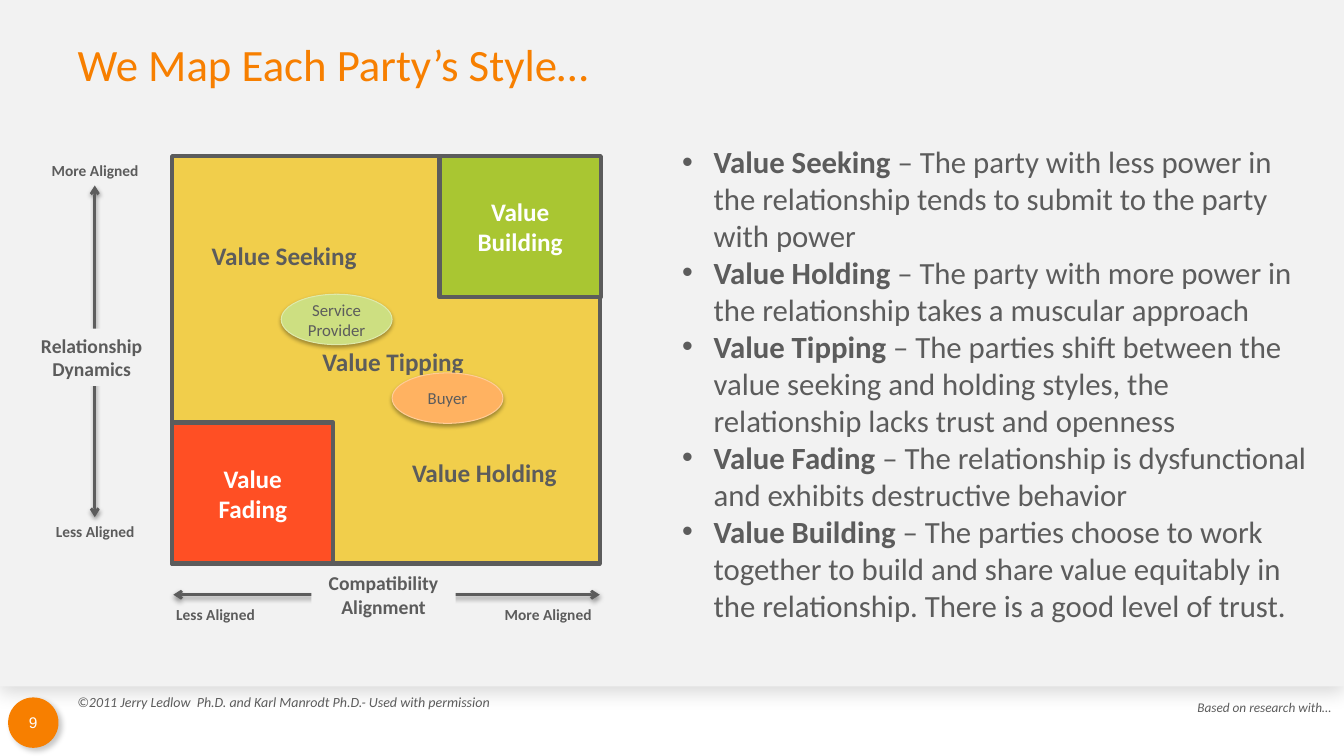
"""Builds the slide that maps each party's style on an alignment matrix."""
import pptx
import pptx.util
import pptx.dml.color
import pptx.enum.shapes
import pptx.enum.text
import pptx.oxml
import pptx.oxml.ns
from dataclasses import dataclass

Pt = pptx.util.Pt
Kind = pptx.enum.shapes.MSO_SHAPE
Align = pptx.enum.text.PP_ALIGN
Anchor = pptx.enum.text.MSO_ANCHOR


@dataclass(frozen=True)
class Theme:
    """Colours, fonts and type sizes."""
    panel: str = "F2F2F2"
    ink: str = "5C5C5C"
    white: str = "FFFFFF"
    accent: str = "F77F00"
    matrix: str = "F1CE4B"
    building: str = "A9C632"
    fading: str = "FF4F24"
    buyer: tuple = ("FFB261", "FFCC96")
    provider: tuple = ("CDDF81", "DEEAAB")
    font: str = "Calibri"
    number_font: str = "Arial"
    title: float = 32
    body: float = 22
    zone: float = 18
    axis: float = 14
    party: float = 12
    end: float = 11
    footer: float = 10
    credit: float = 9.5


THEME = Theme()

TITLE = "We Map Each Party’s Style…"
COPYRIGHT = "©2011 Jerry Ledlow  Ph.D. and Karl Manrodt Ph.D.- Used with permission"
CREDIT = "Based on research with…"
PAGE_NUMBER = "9"
STYLES = [
    ("Value Seeking", "The party with less power in the relationship tends to submit "
     "to the party with power"),
    ("Value Holding", "The party with more power in the relationship takes a muscular approach"),
    ("Value Tipping", "The parties shift between the value seeking and holding styles, "
     "the relationship lacks trust and openness"),
    ("Value Fading", "The relationship is dysfunctional and exhibits destructive behavior"),
    ("Value Building", "The parties choose to work together to build and share value "
     "equitably in the relationship. There is a good level of trust."),
]
MATRIX = (123, 111.6, 305.4, 291)
CORNER = (115.2, 100.8)
CORNERS = [
    (["Value Building"], THEME.building, (314, MATRIX[1])),
    (["Value", "Fading"], THEME.fading, (MATRIX[0], MATRIX[1] + MATRIX[3] - CORNER[1])),
]
ZONES = [
    ("Value Holding", (263.5, 323.3, 165, 28.8)),
    ("Value Seeking", (118.8, 167.8, 168.5, 28.8)),
    ("Value Tipping", (196.6, 244.1, 168.5, 28.8)),
]
AXIS_ENDS = [
    ("Less Aligned", (118.8, 428.4, 108, 20.9), Align.LEFT),
    ("More Aligned", (321.8, 428.4, 108, 20.9), Align.RIGHT),
    ("More Aligned", (26.6, 111.6, 82.8, 20.9), Align.CENTER),
    ("Less Aligned", (26.6, 369.4, 82.8, 20.9), Align.CENTER),
]
AXES = [
    (["Compatibility", "Alignment"], (222.5, 404.6, 103, 41), (123.8, 424.8, 428.4, 424.8)),
    (["Relationship Dynamics"], (12.2, 234.7, 106.6, 41), (67.7, 132.5, 67.7, 369.4)),
]
PARTIES = [
    ("Buyer", THEME.buyer, (280.1, 266.4)),
    ("Service Provider", THEME.provider, (200.9, 210.2)),
]
PARTY_SIZE = (79.2, 36)


def rgb(value):
    """Turn a hex string into a colour."""
    return pptx.dml.color.RGBColor.from_string(value)


def write(shape, paras, size, color=THEME.ink, align=Align.LEFT, anchor=Anchor.TOP,
          font=THEME.font, bold=False, italic=False, wrap=True, bullet=None, inset=None):
    """Fill a shape with paragraphs, each a list of (text, bold) spans or a string."""
    frame = shape.text_frame
    frame.word_wrap = wrap
    frame.vertical_anchor = anchor
    if inset is not None:
        frame.margin_left = frame.margin_right = frame.margin_top = frame.margin_bottom = Pt(inset)
    for index, spans in enumerate(paras):
        para = frame.paragraphs[0] if index == 0 else frame.add_paragraph()
        para.alignment = align
        if bullet:
            props = para._p.get_or_add_pPr()
            props.set("marL", str(Pt(22.5)))
            props.set("indent", str(-Pt(22.5)))
            for tag, key, value in (("a:buFont", "typeface", "Arial"), ("a:buChar", "char", bullet)):
                mark = pptx.oxml.xmlchemy.OxmlElement(tag)
                mark.set(key, value)
                props.append(mark)
        for text, strong in [(spans, bold)] if isinstance(spans, str) else spans:
            span = para.add_run()
            span.text = text
            span.font.name = font
            span.font.size = Pt(size)
            span.font.bold = strong
            span.font.italic = italic
            span.font.color.rgb = rgb(color)


def add_label(page, box, paras, size, **style):
    """Add a text box."""
    write(page.shapes.add_textbox(*map(Pt, box)), paras, size, **style)


def add_block(page, kind, box, fill, line=None, weight=3):
    """Add a filled shape without shadow."""
    shape = page.shapes.add_shape(kind, *map(Pt, box))
    shape.shadow.inherit = False
    shape.fill.solid()
    shape.fill.fore_color.rgb = rgb(fill)
    if line:
        shape.line.color.rgb = rgb(line)
        shape.line.width = Pt(weight)
    else:
        shape.line.fill.background()
    return shape


def cast_shadow(shape, opacity, blur, distance, angle=90):
    """Give a shape an outer black shadow."""
    props = shape.element.spPr
    for old in props.findall(pptx.oxml.ns.qn("a:effectLst")):
        props.remove(old)
    props.append(pptx.oxml.parse_xml(
        f'<a:effectLst {pptx.oxml.ns.nsdecls("a")}><a:outerShdw blurRad="{Pt(blur)}" '
        f'dist="{Pt(distance)}" dir="{angle * 60000}" algn="ctr" rotWithShape="0">'
        f'<a:srgbClr val="000000"><a:alpha val="{opacity * 1000}"/></a:srgbClr>'
        '</a:outerShdw></a:effectLst>'))


def add_axis(page, ends):
    """Add a line with an arrowhead at each end."""
    axis = page.shapes.add_connector(pptx.enum.shapes.MSO_CONNECTOR.STRAIGHT, *map(Pt, ends))
    axis.line.color.rgb = rgb(THEME.ink)
    axis.line.width = Pt(2)
    for tag in ("a:headEnd", "a:tailEnd"):
        tip = pptx.oxml.xmlchemy.OxmlElement(tag)
        tip.set("type", "arrow")
        axis.line._get_or_add_ln().append(tip)
    cast_shadow(axis, 38, 3.1, 1.6)


def add_frame(page):
    """Add the panel, title, footer and page number."""
    panel = add_block(page, Kind.RECTANGLE, (0, 0, 960, 490.3), THEME.panel)
    cast_shadow(panel, 15, 14, 5)
    title = page.shapes.title
    title.element.addprevious(panel.element)
    title.left, title.top, title.width, title.height = map(Pt, (48.2, 14.4, 864, 61.9))
    write(title, [TITLE], THEME.title, THEME.accent, anchor=Anchor.MIDDLE)
    add_label(page, (848.2, 496.1, 110.9, 18.7), [CREDIT], THEME.credit, italic=True, wrap=False)
    add_label(page, (48.2, 491.8, 312.5, 17.3), [COPYRIGHT], THEME.footer, italic=True, wrap=False)
    badge = add_block(page, Kind.OVAL, (5.8, 498.2, 36, 36), THEME.accent)
    cast_shadow(badge, 22, 4, 3, 45)
    write(badge, [PAGE_NUMBER], THEME.end, THEME.white, Align.CENTER, Anchor.MIDDLE,
          THEME.number_font, inset=0)


def add_matrix(page):
    """Add the matrix with its zones, axes and parties."""
    add_block(page, Kind.RECTANGLE, MATRIX, THEME.matrix, THEME.ink)
    for lines, fill, corner in CORNERS:
        block = add_block(page, Kind.RECTANGLE, corner + CORNER, fill, THEME.ink)
        write(block, lines, THEME.zone, THEME.white, Align.CENTER, Anchor.MIDDLE, bold=True)
    for text, box, align in AXIS_ENDS:
        add_label(page, box, [text], THEME.end, align=align, bold=True)
    for lines, box, ends in AXES:
        add_axis(page, ends)
        plate = add_block(page, Kind.RECTANGLE, box, THEME.panel)
        write(plate, lines, THEME.axis, align=Align.CENTER, bold=True)
    for text, box in ZONES:
        add_label(page, box, [text], THEME.zone, align=Align.CENTER, bold=True)
    for text, (fill, line), corner in PARTIES:
        party = add_block(page, Kind.OVAL, corner + PARTY_SIZE, fill, line, 0.75)
        cast_shadow(party, 35, 3.1, 1.8)
        write(party, [text], THEME.party, align=Align.CENTER, anchor=Anchor.MIDDLE, inset=0)


def main():
    """Build and save the deck."""
    deck = pptx.Presentation()
    deck.slide_width, deck.slide_height = Pt(960), Pt(540)
    page = deck.slides.add_slide(deck.slide_layouts.get_by_name("Title Only"))
    add_frame(page)
    add_matrix(page)
    styles = [[(name, True), (f" – {meaning}", False)] for name, meaning in STYLES]
    add_label(page, (480.2, 98.6, 460.8, 353.5), styles, THEME.body, bullet="•")
    deck.save("out.pptx")


if __name__ == "__main__":
    main()
